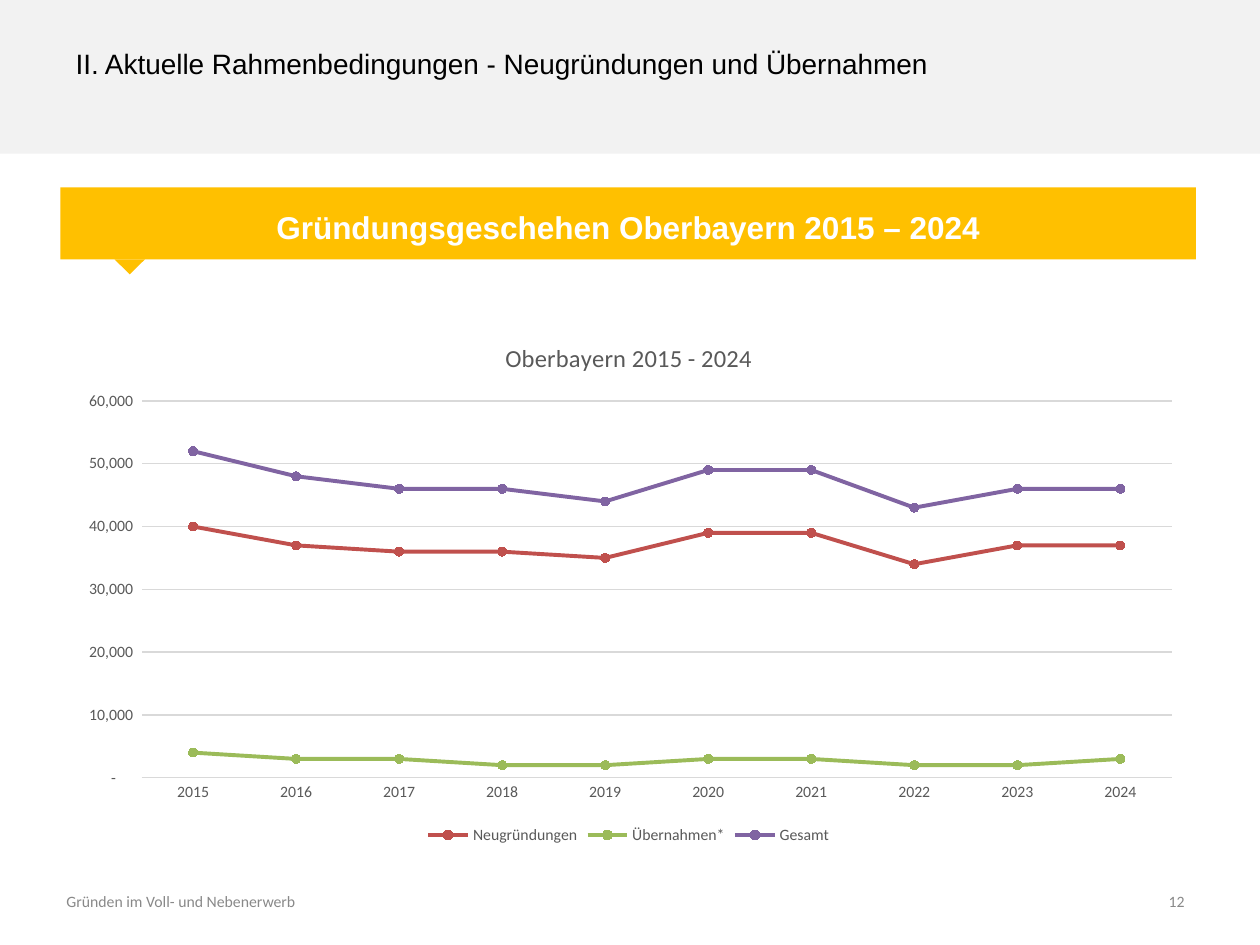
import lxml.etree
import pptx
import pptx.chart.data
import pptx.dml.color
import pptx.enum.chart
import pptx.enum.shapes
import pptx.enum.text
import pptx.util
from pptx.util import Cm

RGBColor = pptx.dml.color.RGBColor
PP_ALIGN = pptx.enum.text.PP_ALIGN
MSO_ANCHOR = pptx.enum.text.MSO_ANCHOR
MSO_SHAPE = pptx.enum.shapes.MSO_SHAPE

BLACK = RGBColor(0x00, 0x00, 0x00)
WHITE = RGBColor(0xFF, 0xFF, 0xFF)
BAND_GREY = RGBColor(0xF2, 0xF2, 0xF2)
FOOTER_GREY = RGBColor(0x89, 0x89, 0x89)
CHART_TEXT = RGBColor(0x59, 0x59, 0x59)
GRID_GREY = RGBColor(0xD9, 0xD9, 0xD9)
AMBER = RGBColor(0xFF, 0xC0, 0x00)
RED = RGBColor(0xC0, 0x50, 0x4D)
GREEN = RGBColor(0x9B, 0xBB, 0x59)
PURPLE = RGBColor(0x80, 0x64, 0xA2)

NUMBER_FORMAT = '_-* #,##0_-;\\-* #,##0_-;_-* "-"??_-;_-@_'
YEARS = [str(year) for year in range(2015, 2025)]
SERIES = [
    ("Neugründungen", RED, [40, 37, 36, 36, 35, 39, 39, 34, 37, 37]),
    ("Übernahmen*", GREEN, [4, 3, 3, 2, 2, 3, 3, 2, 2, 3]),
    ("Gesamt", PURPLE, [52, 48, 46, 46, 44, 49, 49, 43, 46, 46]),
]


def set_font(font, size, color, name="Calibri", bold=False):
    """Apply typeface, size, colour and weight to a font."""
    font.name = name
    font.size = pptx.util.Pt(size)
    font.bold = bold
    font.color.rgb = color


def write_text(shape, text, align=PP_ALIGN.LEFT, anchor=MSO_ANCHOR.TOP,
               line_spacing=1.0, **font_format):
    """Put one formatted paragraph into a shape."""
    frame = shape.text_frame
    frame.word_wrap = True
    frame.auto_size = pptx.enum.text.MSO_AUTO_SIZE.NONE
    frame.vertical_anchor = anchor
    frame.text = text
    paragraph = frame.paragraphs[0]
    paragraph.alignment = align
    paragraph.line_spacing = line_spacing
    set_font(paragraph.runs[0].font, **font_format)


def add_block(slide, kind, color, left, top, width, height):
    """Add a flat preset shape without outline."""
    shape = slide.shapes.add_shape(kind, left, top, width, height)
    shape.shadow.inherit = False
    shape.fill.solid()
    shape.fill.fore_color.rgb = color
    shape.line.fill.background()
    return shape


def add_header(slide):
    """Place the slide title on a grey band."""
    title = slide.shapes.title
    title.left, title.top, title.width, title.height = Cm(1.27), Cm(0.81), Cm(19.46), Cm(1.63)
    write_text(title, "II. Aktuelle Rahmenbedingungen - Neugründungen und Übernahmen",
               size=16, color=BLACK, name="Arial")
    band = add_block(slide, MSO_SHAPE.RECTANGLE, BAND_GREY, Cm(0), Cm(-0.1), Cm(25.4), Cm(3.2))
    title.element.addprevious(band.element)


def add_banner(slide):
    """Add the amber heading bar with its downward pointer."""
    pointer = add_block(slide, MSO_SHAPE.ISOSCELES_TRIANGLE, AMBER,
                        Cm(2.31), Cm(5.23), Cm(0.61), Cm(0.3))
    pointer.rotation = 180
    bar = add_block(slide, MSO_SHAPE.RECTANGLE, AMBER, Cm(1.22), Cm(3.78), Cm(22.89), Cm(1.45))
    write_text(bar, "Gründungsgeschehen Oberbayern 2015 – 2024", align=PP_ALIGN.CENTER,
               anchor=MSO_ANCHOR.MIDDLE, line_spacing=1.2,
               size=18, color=WHITE, name="Arial", bold=True)


def format_axes(chart):
    """Style both axes and the gridlines."""
    for axis in (chart.category_axis, chart.value_axis):
        axis.major_tick_mark = pptx.enum.chart.XL_TICK_MARK.NONE
        axis.minor_tick_mark = pptx.enum.chart.XL_TICK_MARK.NONE
        set_font(axis.tick_labels.font, 9, CHART_TEXT)
    value_axis = chart.value_axis
    value_axis.minimum_scale, value_axis.maximum_scale = 0, 60000
    value_axis.major_unit = 10000
    value_axis.tick_labels.number_format = NUMBER_FORMAT
    value_axis.tick_labels.number_format_is_linked = False
    value_axis.format.line.fill.background()
    for line in (chart.category_axis.format.line, value_axis.major_gridlines.format.line):
        line.color.rgb = GRID_GREY
        line.width = pptx.util.Pt(0.75)


def format_series(series, color):
    """Draw a series as a straight line with round markers."""
    series.smooth = False
    series.format.line.color.rgb = color
    series.format.line.width = pptx.util.Pt(2.25)
    marker = series.marker
    marker.style = pptx.enum.chart.XL_MARKER_STYLE.CIRCLE
    marker.size = 5
    marker.format.fill.solid()
    marker.format.fill.fore_color.rgb = color
    marker.format.line.color.rgb = color


def add_line_chart(slide):
    """Add the chart of business start-ups and takeovers."""
    chart_data = pptx.chart.data.CategoryChartData(number_format=NUMBER_FORMAT)
    chart_data.categories = YEARS
    for name, _, thousands in SERIES:
        chart_data.add_series(name, [value * 1000 for value in thousands])
    chart = slide.shapes.add_chart(pptx.enum.chart.XL_CHART_TYPE.LINE_MARKERS,
                                   Cm(1.27), Cm(6.43), Cm(22.81), Cm(10.69), chart_data).chart
    set_font(chart.font, 10, BLACK)
    chart.has_title = True
    chart.chart_title.include_in_layout = False
    title_frame = chart.chart_title.text_frame
    title_frame.text = "Oberbayern 2015 - 2024"
    set_font(title_frame.paragraphs[0].runs[0].font, 14, CHART_TEXT)
    chart.has_legend = True
    chart.legend.position = pptx.enum.chart.XL_LEGEND_POSITION.BOTTOM
    chart.legend.include_in_layout = False
    set_font(chart.legend.font, 9, CHART_TEXT)
    format_axes(chart)
    plot = chart.plots[0]
    plot.vary_by_categories = False
    for series, (_, color, _) in zip(plot.series, SERIES):
        format_series(series, color)


def add_footer(slide):
    """Add the footer text and the page number."""
    footer = slide.shapes.add_textbox(Cm(1.09), Cm(17.86), Cm(15.42), Cm(0.71))
    write_text(footer, "Gründen im Voll- und Nebenerwerb", size=9, color=FOOTER_GREY)
    number = slide.shapes.add_textbox(Cm(22.1), Cm(17.65), Cm(2.03), Cm(1.02))
    write_text(number, "12", align=PP_ALIGN.RIGHT, anchor=MSO_ANCHOR.MIDDLE,
               size=9, color=FOOTER_GREY)


def main():
    """Build and save the slide."""
    presentation = pptx.Presentation()
    presentation.slide_width, presentation.slide_height = Cm(25.4), Cm(19.05)
    slide = presentation.slides.add_slide(presentation.slide_layouts[5])
    add_header(slide)
    add_banner(slide)
    add_line_chart(slide)
    add_footer(slide)
    presentation.save("out.pptx")


if __name__ == "__main__":
    main()
